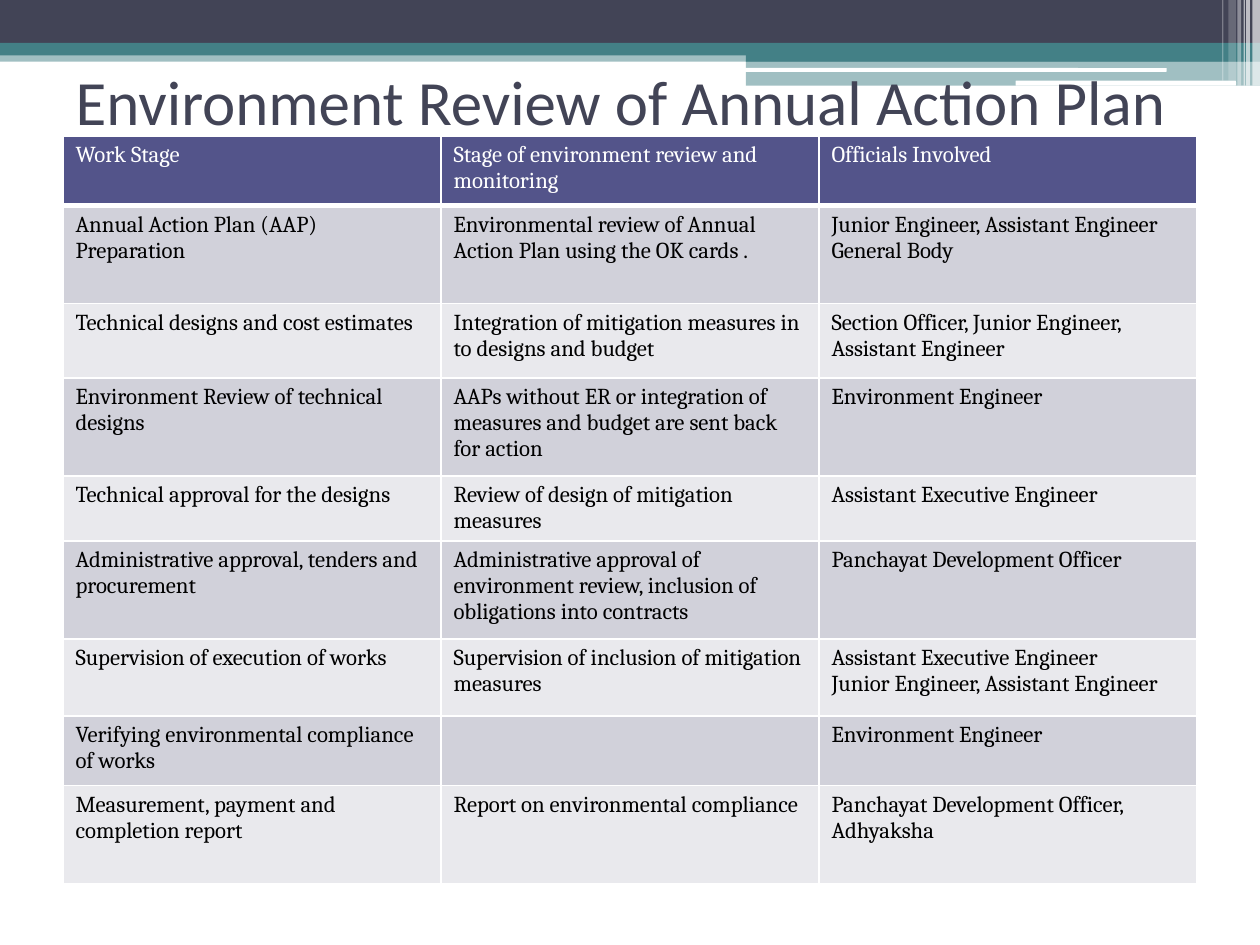
import pptx
import pptx.dml.color
import pptx.enum.shapes
import pptx.enum.text
import pptx.oxml
import pptx.oxml.ns
import pptx.util

Inches = pptx.util.Inches
Pt = pptx.util.Pt
RGB = pptx.dml.color.RGBColor
SHAPE = pptx.enum.shapes.MSO_SHAPE

WHITE = RGB(0xFF, 0xFF, 0xFF)
BLACK = RGB(0x00, 0x00, 0x00)
SLATE = RGB(0x42, 0x44, 0x56)
TEAL = RGB(0x43, 0x80, 0x86)
INDIGO = RGB(0x53, 0x54, 0x8A)
BAND_DARK = RGB(0xD1, 0xD1, 0xDA)
BAND_LIGHT = RGB(0xE9, 0xE9, 0xED)

BARS = [
    (0, 0.4, 10, 0.09, TEAL, 50),
    (0, 0, 10, 0.34, SLATE, 100),
    (0, 0.34, 10, 0.1, TEAL, 100),
    (5.92, 0.39, 4.08, 0.1, TEAL, 100),
    (5.92, 0.48, 4.08, 0.2, TEAL, 50),
]
ROUNDED_LINES = [(5.91, 0.54, 3.35, 0.03), (8.06, 0.64, 1.75, 0.04)]
STRIPES = [
    (9.94, 0.06, 0.68, 65),
    (9.89, 0.03, 0.68, 65),
    (9.87, 0.01, 0.68, 60),
    (9.82, 0.03, 0.68, 40),
    (9.75, 0.06, 0.64, 20),
    (9.7, 0.01, 0.64, 30),
]

ROW_HEIGHTS = [0.55, 0.78, 0.59, 0.78, 0.44, 0.78, 0.61, 0.55, 0.78]
ROWS = [
    ("Work Stage", "Stage of environment review and monitoring", "Officials Involved"),
    ("Annual Action Plan (AAP) Preparation",
     "Environmental review of Annual Action Plan using the OK cards .",
     "Junior Engineer, Assistant Engineer\nGeneral Body"),
    ("Technical designs and cost estimates",
     "Integration of mitigation measures in to designs and budget",
     "Section Officer, Junior Engineer, Assistant Engineer"),
    ("Environment Review of technical designs",
     "AAPs without ER or integration of measures and budget are sent back for action",
     "Environment Engineer"),
    ("Technical approval for the designs",
     "Review of design of mitigation measures",
     "Assistant Executive Engineer"),
    ("Administrative approval, tenders and procurement",
     "Administrative approval of environment review, inclusion of obligations into contracts",
     "Panchayat Development Officer"),
    ("Supervision of execution of works",
     "Supervision of inclusion of mitigation measures",
     "Assistant Executive Engineer\nJunior Engineer, Assistant Engineer"),
    ("Verifying environmental compliance of works", "", "Environment Engineer"),
    ("Measurement, payment and completion report",
     "Report on environmental compliance",
     "Panchayat Development Officer, Adhyaksha"),
]


def add_bar(slide, x, y, w, h, color, opacity=100, kind=SHAPE.RECTANGLE):
    """Add a borderless bar with the given opacity in percent."""
    sp = slide.shapes.add_shape(kind, Inches(x), Inches(y), Inches(w), Inches(h))
    sp.shadow.inherit = False
    sp.line.fill.background()
    sp.fill.solid()
    sp.fill.fore_color.rgb = color
    if opacity < 100:
        clr = sp.fill._xPr.find(".//" + pptx.oxml.ns.qn("a:srgbClr"))
        alpha = pptx.oxml.parse_xml(
            f'<a:alpha {pptx.oxml.ns.nsdecls("a")} val="{opacity * 1000}"/>')
        clr.append(alpha)


def add_header(slide, x, y):
    """Draw the header bars, rounded lines and corner stripes from a top-left point."""
    for left, top, w, h, color, opacity in BARS:
        add_bar(slide, x + left, y + top, w, h, color, opacity)
    for left, top, w, h in ROUNDED_LINES:
        add_bar(slide, x + left, y + top, w, h, WHITE, kind=SHAPE.ROUNDED_RECTANGLE)
    for left, w, h, opacity in STRIPES:
        add_bar(slide, x + left, y, w, h, WHITE, opacity)


def add_title(slide, text, x, y, w, h):
    """Fill the title placeholder and bring it in front of the header."""
    sp = slide.shapes.title
    sp.left, sp.top, sp.width, sp.height = Inches(x), Inches(y), Inches(w), Inches(h)
    slide.shapes._spTree.append(sp._element)
    tf = sp.text_frame
    tf.text = text
    tf.word_wrap = True
    tf.auto_size = pptx.enum.text.MSO_AUTO_SIZE.NONE
    tf.vertical_anchor = pptx.enum.text.MSO_ANCHOR.MIDDLE
    p = tf.paragraphs[0]
    p.alignment = pptx.enum.text.PP_ALIGN.LEFT
    p.font.name, p.font.size = "Calibri", Pt(36)
    p.font.color.rgb = SLATE


def set_borders(cell, bottom):
    """Give a cell white borders, with its own bottom width in points."""
    widths = {"L": 1, "R": 1, "T": 1, "B": bottom}
    for i, (side, width) in enumerate(widths.items()):
        ln = pptx.oxml.parse_xml(
            f'<a:ln{side} {pptx.oxml.ns.nsdecls("a")} w="{Pt(width)}"><a:solidFill>'
            f'<a:srgbClr val="{WHITE}"/></a:solidFill></a:ln{side}>')
        cell._tc.get_or_add_tcPr().insert(i, ln)


def add_review_table(slide, x, y, w):
    """Build the review table with a header row and alternating bands."""
    cols = len(ROWS[0])
    table = slide.shapes.add_table(
        len(ROWS), cols, Inches(x), Inches(y), Inches(w), Inches(sum(ROW_HEIGHTS))).table
    for col in table.columns:
        col.width = Inches(w / cols)
    for r, texts in enumerate(ROWS):
        table.rows[r].height = Inches(ROW_HEIGHTS[r])
        band = INDIGO if r == 0 else BAND_DARK if r % 2 else BAND_LIGHT
        for c, text in enumerate(texts):
            cell = table.cell(r, c)
            cell.text = text
            cell.fill.solid()
            cell.fill.fore_color.rgb = band
            set_borders(cell, 3 if r == 0 else 1)
            for p in cell.text_frame.paragraphs:
                p.font.name, p.font.size, p.font.bold = "Cambria", Pt(13), False
                p.font.color.rgb = BLACK if r else WHITE


def main():
    """Build and save the slide."""
    prs = pptx.Presentation()
    prs.slide_width, prs.slide_height = Inches(10), Inches(7.5)
    slide = prs.slides.add_slide(prs.slide_layouts[5])
    add_header(slide, 0, 0)
    add_title(slide, "Environment Review of Annual Action Plan", 0.5, 0.42, 9, 0.75)
    add_review_table(slide, 0.5, 1.08, 9)
    prs.save("out.pptx")


if __name__ == "__main__":
    main()
